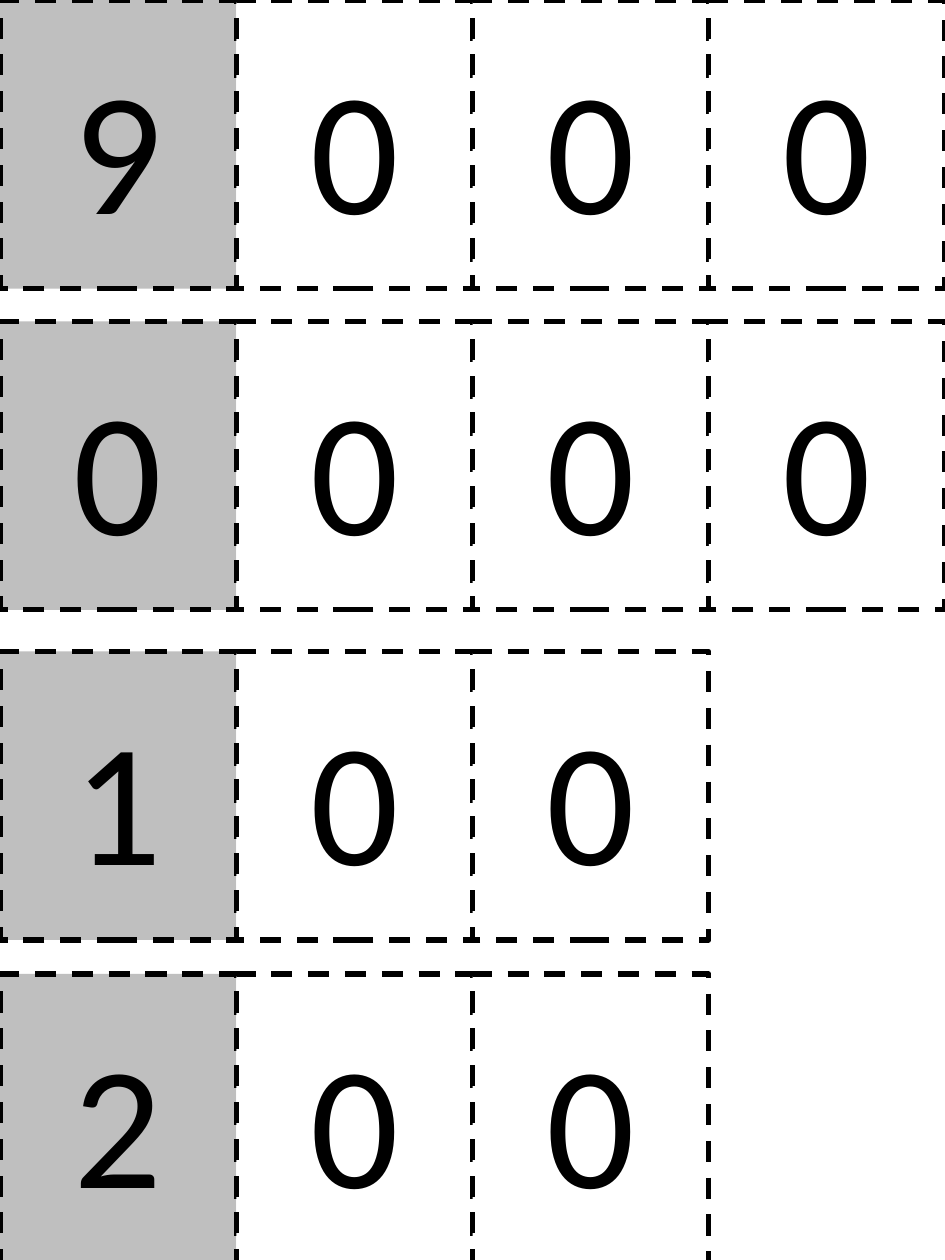
from pptx import Presentation
from pptx.dml.color import RGBColor
from pptx.enum.dml import MSO_LINE
from pptx.enum.shapes import MSO_SHAPE
from pptx.enum.text import MSO_ANCHOR, PP_ALIGN
from pptx.util import Inches, Pt

RECT = MSO_SHAPE.RECTANGLE
DASH = MSO_LINE.DASH
MIDDLE = MSO_ANCHOR.MIDDLE
CENTER = PP_ALIGN.CENTER

SLIDE_W, SLIDE_H = 7.5, 10
COLUMNS = 4
CARD_W, CARD_H = SLIDE_W / COLUMNS, 2.29
LEAD_FILL, ZERO_FILL, INK = "BFBFBF", "FFFFFF", "000000"
DIGIT_FONT = {"name": "Calibri", "size": Pt(100)}

# Top of each strip and its digits; (top, digits, grouped)
STRIPS = [
    (0, "9000", True),
    (2.55, "0000", True),
    (5.17, "100", False),
    (7.73, "200", False),
]


def paint(color, hex_value):
    color.rgb = RGBColor.from_string(hex_value)


def add_card(shapes, box, digit, fill):
    """One dashed card with a centred digit."""
    sp = shapes.add_shape(RECT, *(Inches(v) for v in box))
    sp.shadow.inherit = False
    sp.fill.solid()
    paint(sp.fill.fore_color, fill)
    paint(sp.line.color, INK)
    sp.line.width = Pt(3)
    sp.line.dash_style = DASH

    tf = sp.text_frame
    tf.vertical_anchor = MIDDLE
    p = tf.paragraphs[0]
    p.alignment = CENTER
    r = p.add_run()
    r.text = digit
    for name, value in DIGIT_FONT.items():
        setattr(r.font, name, value)
    paint(r.font.color, INK)


def add_strip(shapes, box, digits):
    """A row of equal cards, the leading one shaded."""
    left, top, width, height = box
    card_w = width / len(digits)
    for i, digit in enumerate(digits):
        fill = ZERO_FILL if i else LEAD_FILL
        add_card(shapes, (left + i * card_w, top, card_w, height), digit, fill)


def main():
    prs = Presentation()
    prs.slide_width, prs.slide_height = Inches(SLIDE_W), Inches(SLIDE_H)
    blank = prs.slide_layouts[6]
    slide = prs.slides.add_slide(blank)

    # Place-value strips, thousands above hundreds
    for top, digits, grouped in STRIPS:
        shapes = slide.shapes.add_group_shape().shapes if grouped else slide.shapes
        add_strip(shapes, (0, top, len(digits) * CARD_W, CARD_H), digits)

    prs.save("out.pptx")


if __name__ == "__main__":
    main()
